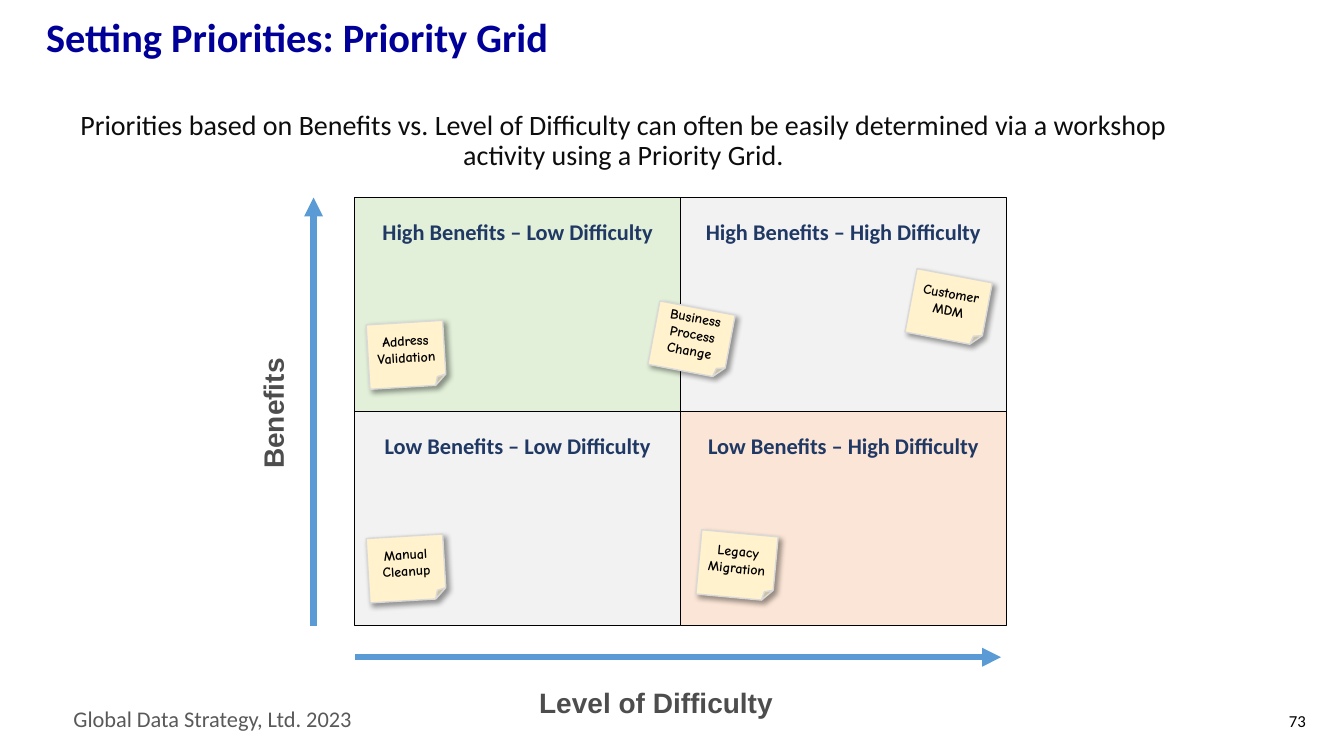
from lxml import etree
from pptx import Presentation
from pptx.dml.color import RGBColor
from pptx.enum.shapes import MSO_CONNECTOR, MSO_SHAPE
from pptx.enum.text import MSO_ANCHOR, PP_ALIGN
from pptx.oxml.ns import qn
from pptx.util import Inches, Pt

RECT, FOLD = MSO_SHAPE.RECTANGLE, MSO_SHAPE.FOLDED_CORNER
STRAIGHT = MSO_CONNECTOR.STRAIGHT
TOP, MIDDLE, BOTTOM = MSO_ANCHOR.TOP, MSO_ANCHOR.MIDDLE, MSO_ANCHOR.BOTTOM
LEFT, CENTER, RIGHT = PP_ALIGN.LEFT, PP_ALIGN.CENTER, PP_ALIGN.RIGHT

BLACK = RGBColor(0x00, 0x00, 0x00)
INK = RGBColor(0x0D, 0x0D, 0x0D)
NAVY = RGBColor(0x00, 0x00, 0x99)
DEEP = RGBColor(0x20, 0x38, 0x64)
DARK = RGBColor(0x4D, 0x4D, 0x4D)
GRAY = RGBColor(0x59, 0x59, 0x59)
EDGE = RGBColor(0xD9, 0xD9, 0xD9)
BLUE = RGBColor(0x5B, 0x9B, 0xD5)
GREEN = RGBColor(0xE2, 0xF0, 0xD9)
PEACH = RGBColor(0xFB, 0xE5, 0xD6)
PALE = RGBColor(0xF2, 0xF2, 0xF2)
CREAM = RGBColor(0xFF, 0xF2, 0xCC)

GRID_X, GRID_Y = 26.41, 26.13
CELL_W, CELL_H = 24.23, 28.33
NOTE_W, NOTE_H = 5.7, 8.53


class Board:
    font = "Calibri"
    hand = "Comic Neue"
    sans = "Arial"

    def __init__(self, deck):
        self.wide = deck.slide_width / 100
        self.high = deck.slide_height / 100
        self.shapes = deck.slides.add_slide(deck.slide_layouts[6]).shapes

    def place(self, x, y, w, h):
        return (round(x * self.wide), round(y * self.high),
                round(w * self.wide), round(h * self.high))

    def words(self, frame, text, size, color, bold=False, font=None,
              align=LEFT, anchor=TOP, wrap=True, space=1.0):
        frame.text = text
        frame.word_wrap = wrap
        frame.vertical_anchor = anchor
        para = frame.paragraphs[0]
        para.alignment = align
        para.line_spacing = space
        face = para.runs[0].font
        face.name, face.size, face.bold = font or self.font, Pt(size), bold
        face.color.rgb = color

    def label(self, text, box, size, color, turn=0, **style):
        shape = self.shapes.add_textbox(*self.place(*box))
        shape.rotation = turn
        self.words(shape.text_frame, text, size, color, **style)

    def block(self, kind, box, fill, edge, weight):
        shape = self.shapes.add_shape(kind, *self.place(*box))
        shape.shadow.inherit = False
        shape.fill.solid()
        shape.fill.fore_color.rgb = fill
        shape.line.color.rgb = edge
        shape.line.width = Pt(weight)
        return shape

    def cell(self, text, col, row, fill):
        box = (GRID_X + col * CELL_W, GRID_Y + row * CELL_H, CELL_W, CELL_H)
        frame = self.block(RECT, box, fill, BLACK, 0.75).text_frame
        frame.margin_top = Inches(0.2)
        self.words(frame, text, 16, DEEP, bold=True, align=CENTER, wrap=False)

    def note(self, text, x, y, turn):
        shape = self.block(FOLD, (x, y, NOTE_W, NOTE_H), CREAM, EDGE, 1)
        shape.rotation = turn
        frame = shape.text_frame
        frame.margin_left = frame.margin_right = frame.margin_top = Inches(0.05)
        frame.margin_bottom = Inches(0.06)
        self.words(frame, text, 10, BLACK, bold=True, font=self.hand,
                   align=CENTER, anchor=MIDDLE)
        effect = shape._element.spPr.find(qn("a:effectLst"))
        shade = etree.SubElement(
            effect, qn("a:outerShdw"), blurRad=str(Pt(4)), dist=str(Pt(3)),
            dir=str(45 * 60000), algn="tl", rotWithShape="0")
        tint = etree.SubElement(shade, qn("a:srgbClr"), val=str(BLACK))
        etree.SubElement(tint, qn("a:alpha"), val="40000")

    def arrow(self, x1, y1, x2, y2):
        line = self.shapes.add_connector(STRAIGHT, *self.place(x1, y1, x2, y2))
        line.line.color.rgb = BLUE
        line.line.width = Pt(4.5)
        props = line._element.spPr
        etree.SubElement(props.find(qn("a:ln")), qn("a:tailEnd"), type="triangle")
        etree.SubElement(props, qn("a:effectLst"))


def main():
    deck = Presentation()
    deck.slide_width, deck.slide_height = Inches(13.33), Inches(7.5)
    board = Board(deck)

    board.label("Global Data Strategy, Ltd. 2023", (4.73, 92.67, 27.16, 4.93), 16, GRAY)
    board.label("Setting Priorities: Priority Grid", (2.7, 1.6, 83.42, 7.2),
                28.8, NAVY, bold=True, anchor=BOTTOM, space=0.9)
    board.label("Priorities based on Benefits vs. Level of Difficulty can often be "
                "easily determined via a workshop activity using a Priority Grid.",
                (2.7, 14, 87.4, 7.87), 20, INK, align=CENTER, space=0.9)

    for text, col, row, fill in (
        ("High Benefits – Low Difficulty", 0, 0, GREEN),
        ("Low Benefits – High Difficulty", 1, 1, PEACH),
        ("High Benefits – High Difficulty", 1, 0, PALE),
        ("Low Benefits – Low Difficulty", 0, 1, PALE),
    ):
        board.cell(text, col, row, fill)

    axis = dict(bold=True, font=board.sans)
    board.label("Level of Difficulty", (39.38, 90, 19.05, 5.87), 20, DARK,
                wrap=False, **axis)
    board.label("Benefits", (12.75, 47.07, 15.08, 5.73), 20, DARK, turn=270, **axis)
    board.arrow(23.33, GRID_Y + 2 * CELL_H, 23.33, GRID_Y)
    board.arrow(GRID_X, 86.93, 74.49, 86.93)

    for text, x, y, turn in (
        ("Address Validation", 27.38, 42.67, 356.6),
        ("Customer MDM", 67.74, 36.4, 10.7),
        ("Manual Cleanup", 27.38, 70.93, 356.6),
        ("Legacy Migration", 51.99, 70.53, 5.3),
        ("Business Process Change", 48.61, 40.67, 10.7),
    ):
        board.note(text, x, y, turn)

    board.label("73", (93.17, 92.67, 4.73, 5.33), 12, BLACK, align=RIGHT, anchor=MIDDLE)
    deck.save("out.pptx")


if __name__ == "__main__":
    main()
